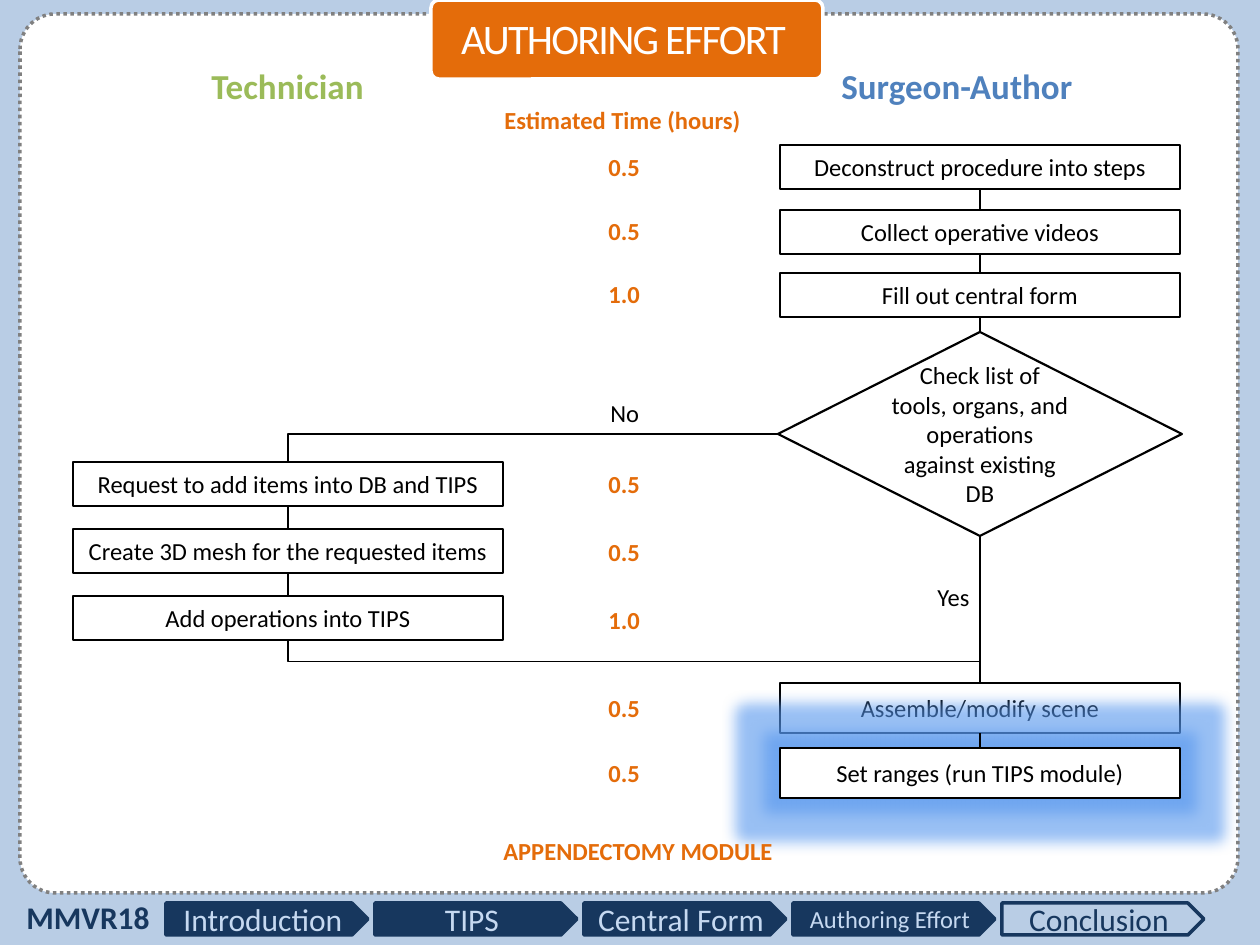
"""Build the authoring effort flowchart slide."""
from itertools import pairwise

from lxml.etree import SubElement
from pptx import Presentation
from pptx.dml.color import RGBColor
from pptx.enum.dml import MSO_LINE
from pptx.enum.shapes import MSO_CONNECTOR as LINK, MSO_SHAPE as SHAPE
from pptx.enum.text import MSO_ANCHOR as ANCHOR, MSO_AUTO_SIZE as FIT, PP_ALIGN as ALIGN
from pptx.oxml.ns import qn
from pptx.util import Pt

EMU_PER_PX = 914400 / 126
TOP, LEFT, BOTTOM = 0, 1, 2
COLORS = {
    "backdrop": "B9CDE5", "white": "FFFFFF", "black": "000000", "border": "808080",
    "navy": "17375E", "pale": "C6D9F1", "orange": "E46C0A", "blue": "4F81BD",
    "green": "9BBB59", "glow": "5596EE",
}


def px(length):
    return round(length * EMU_PER_PX)


def color(name):
    return RGBColor.from_string(COLORS[name])


def write_text(frame, text, size=14, ink="black", bold=False, align=ALIGN.CENTER,
               anchor=ANCHOR.MIDDLE, wrap=True):
    frame.word_wrap = wrap
    frame.vertical_anchor = anchor
    paragraph = frame.paragraphs[0]
    paragraph.alignment = align
    run = paragraph.add_run()
    run.text = text
    run.font.name = "Calibri"
    run.font.size = Pt(size)
    run.font.bold = bold
    run.font.color.rgb = color(ink)
    return run


class FlowSlide:
    def __init__(self, slide):
        self.slide = slide
        self.shapes = slide.shapes
        slide.background.fill.solid()
        slide.background.fill.fore_color.rgb = color("backdrop")

    def block(self, kind, box, text="", fill="white", line="black", weight=1.25,
              corner=None, **style):
        block = self.shapes.add_shape(kind, *map(px, box))
        block.shadow.inherit = False
        if fill:
            block.fill.solid()
            block.fill.fore_color.rgb = color(fill)
        else:
            block.fill.background()
        block.line.color.rgb = color(line)
        block.line.width = Pt(weight)
        if corner is not None:
            block.adjustments[0] = corner
        if text:
            write_text(block.text_frame, text, **style)
        return block

    def label(self, box, text, **style):
        frame = self.shapes.add_textbox(*map(px, box)).text_frame
        write_text(frame, text, align=ALIGN.LEFT, anchor=ANCHOR.TOP, wrap=False, **style)
        frame.auto_size = FIT.SHAPE_TO_FIT_TEXT

    def link(self, source, target, kind=LINK.STRAIGHT, start=BOTTOM):
        link = self.shapes.add_connector(kind, 0, 0, 0, 0)
        link.begin_connect(source, start)
        link.end_connect(target, TOP)
        link.line.color.rgb = color("black")
        link.line.width = Pt(1)
        SubElement(link.element.spPr, qn("a:effectLst"))
        return link

    def corner_link(self, source, target):
        link = self.link(source, target, LINK.ELBOW, LEFT)
        link.element.spPr.find(qn("a:prstGeom")).set("prst", "bentConnector2")

    def drop_link(self, source, target):
        link = self.link(source, target, LINK.ELBOW)
        across, down = link.width, link.height
        link.left += (across - down) // 2
        link.top += (down - across) // 2
        link.width, link.height = down, across
        frame = link.element.spPr.find(qn("a:xfrm"))
        frame.set("rot", "16200000")
        frame.set("flipH", "1")

    def glow(self, block, radius, opacity):
        effects = block.element.spPr.find(qn("a:effectLst"))
        halo = SubElement(effects, qn("a:glow"), rad=str(px(radius)))
        tint = SubElement(halo, qn("a:srgbClr"), val=COLORS["glow"])
        SubElement(tint, qn("a:alpha"), val=str(opacity * 1000))

    def title(self, box, text):
        title = self.shapes.title
        title.left, title.top, title.width, title.height = map(px, box)
        self.shapes.element.append(title.element)
        frame = title.text_frame
        frame.auto_size = FIT.NONE
        frame.margin_left = frame.margin_right = px(23)
        frame.margin_top = frame.margin_bottom = px(23)
        run = write_text(frame, text, size=24, ink="white")
        run.font.element.set("spc", "-100") if hasattr(run.font, "element") else \
            run.element.get_or_add_rPr().set("spc", "-100") if hasattr(run, "element") else \
            frame.paragraphs[0].runs[0]._r.get_or_add_rPr().set("spc", "-100")
        frame.paragraphs[0].line_spacing = 0.9


def build_navigation(flow):
    sections = [("Introduction", 18), ("TIPS", 18), ("Central Form", 18),
                ("Authoring Effort", 14), ("Conclusion", 18)]
    for index, (section, size) in enumerate(sections):
        upcoming = section == "Conclusion"
        flow.block(SHAPE.PENTAGON, (166 + 209 * index, 903, 202, 32), section,
                   fill=None if upcoming else "navy", line="navy", weight=2,
                   size=size, ink="navy" if upcoming else "pale")
    flow.label((14, 892, 150, 50), "MMVR18", size=18, ink="navy", bold=True)


def build_flowchart(flow):
    technician = [
        flow.block(SHAPE.RECTANGLE, (73, 462 + 67 * row, 430, 44), task)
        for row, task in enumerate(["Request to add items into DB and TIPS",
                                    "Create 3D mesh for the requested items",
                                    "Add operations into TIPS"])]
    surgeon = [
        flow.block(SHAPE.RECTANGLE, (780, top, 400, height), task)
        for top, height, task in [(145, 44, "Deconstruct procedure into steps"),
                                  (210, 44, "Collect operative videos"),
                                  (273, 44, "Fill out central form"),
                                  (683, 50, "Assemble/modify scene"),
                                  (748, 50, "Set ranges (run TIPS module)")]]
    assemble, set_ranges = surgeon[3:]
    flow.glow(set_ranges, radius=29, opacity=60)
    check = flow.block(SHAPE.DIAMOND, (778, 332, 404, 204),
                       "Check list of tools, organs, and operations against existing DB")

    for chain in (technician, [*surgeon[:3], check, assemble, set_ranges]):
        for source, target in pairwise(chain):
            flow.link(source, target)
    flow.corner_link(check, technician[0])
    flow.drop_link(technician[-1], assemble)
    flow.label((925, 576, 58, 43), "Yes")
    flow.label((598, 392, 54, 43), "No")


def build_estimates(flow):
    accent = {"ink": "orange", "bold": True}
    flow.label((829, 58, 260, 55), "Surgeon-Author", size=20, ink="blue", bold=True)
    flow.label((199, 58, 179, 55), "Technician", size=20, ink="green", bold=True)
    flow.label((492, 99, 263, 43), "Estimated Time (hours)", **accent)
    hours = {146: "0.5", 210: "0.5", 273: "1.0", 463: "0.5",
             531: "0.5", 599: "1.0", 687: "0.5", 752: "0.5"}
    for top, estimate in hours.items():
        flow.label((596, top, 57, 43), estimate, **accent)
    flow.label((491, 830, 305, 43), "APPENDECTOMY MODULE", **accent)


def main():
    deck = Presentation()
    deck.slide_width, deck.slide_height = px(1260), px(945)
    flow = FlowSlide(deck.slides.add_slide(deck.slide_layouts[5]))
    panel = flow.block(SHAPE.ROUNDED_RECTANGLE, (20, 14, 1218, 879),
                       line="border", weight=2, corner=0.04)
    panel.line.dash_style = MSO_LINE.ROUND_DOT
    build_navigation(flow)
    build_flowchart(flow)
    build_estimates(flow)
    flow.block(SHAPE.ROUNDED_RECTANGLE, (431, 0, 392, 79), fill="orange",
               line="white", weight=2, corner=0.1)
    flow.title((428, 3, 391, 76), "AUTHORING EFFORT")
    deck.save("out.pptx")


if __name__ == "__main__":
    main()
